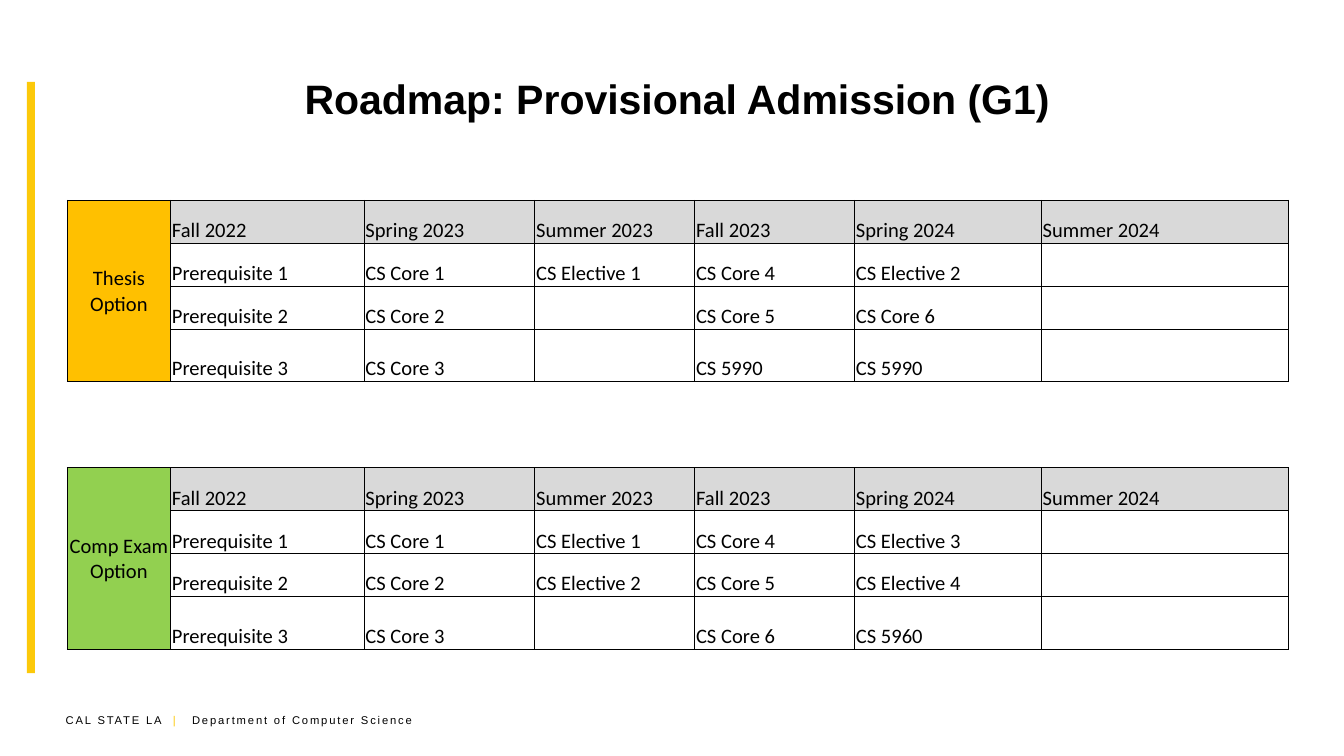
import pptx
import pptx.util
import pptx.dml.color
import pptx.enum.shapes
import pptx.enum.text
import pptx.oxml.ns
from lxml import etree

Inches, Pt = pptx.util.Inches, pptx.util.Pt
Align, Anchor = pptx.enum.text.PP_ALIGN, pptx.enum.text.MSO_ANCHOR
qn = pptx.oxml.ns.qn

# Content
HUES = {"ink": "000000", "gold": "FCC90A", "head": "D9D9D9",
        "thesis": "FFC000", "exam": "92D050"}
TITLE = "Roadmap: Provisional Admission (G1)"
FOOTER = [("CAL STATE LA ", "ink"), (" |\t", "gold"),
          ("Department of Computer Science", "ink")]
TERMS = ["Fall 2022", "Spring 2023", "Summer 2023",
         "Fall 2023", "Spring 2024", "Summer 2024"]
PLANS = [
    ("Thesis Option", "thesis", [
        ["Prerequisite 1", "CS Core 1", "CS Elective 1", "CS Core 4", "CS Elective 2", ""],
        ["Prerequisite 2", "CS Core 2", "", "CS Core 5", "CS Core 6", ""],
        ["Prerequisite 3", "CS Core 3", "", "CS 5990", "CS 5990", ""]]),
    ("Comp Exam Option", "exam", [
        ["Prerequisite 1", "CS Core 1", "CS Elective 1", "CS Core 4", "CS Elective 3", ""],
        ["Prerequisite 2", "CS Core 2", "CS Elective 2", "CS Core 5", "CS Elective 4", ""],
        ["Prerequisite 3", "CS Core 3", "", "CS Core 6", "CS 5960", ""]]),
]
COLS = [0.77, 1.44, 1.27, 1.19, 1.19, 1.39, 1.84]
ROWS = [0.32, 0.32, 0.32, 0.39]
LEFT, TOP, STEP = 0.5, 1.49, 1.99


def color(name):
    return pptx.dml.color.RGBColor.from_string(HUES[name])


def add_run(para, text, size, face, hue="ink", bold=False):
    run = para.add_run()
    run.text = text
    run.font.size, run.font.name, run.font.bold = Pt(size), face, bold
    run.font.color.rgb = color(hue)
    return run


def add_box(slide, *place):
    frame = slide.shapes.add_textbox(*map(Inches, place)).text_frame
    frame.word_wrap = True
    return frame


def add_edges(cell):
    props = cell._tc.get_or_add_tcPr()
    for spot, side in enumerate(("lnL", "lnR", "lnT", "lnB")):
        line = etree.Element(qn("a:" + side), w=str(Pt(0.5)))
        fill = etree.SubElement(line, qn("a:solidFill"))
        etree.SubElement(fill, qn("a:srgbClr"), val=HUES["ink"])
        props.insert(spot, line)


def fill_cell(cell, text, hue, label=False):
    cell.margin_left = cell.margin_right = cell.margin_top = Inches(0.01)
    cell.margin_bottom = 0
    cell.vertical_anchor = Anchor.MIDDLE if label else Anchor.BOTTOM
    if hue:
        cell.fill.solid()
        cell.fill.fore_color.rgb = color(hue)
    else:
        cell.fill.background()
    add_edges(cell)
    if text:
        para = cell.text_frame.paragraphs[0]
        para.alignment = Align.CENTER if label else Align.LEFT
        add_run(para, text, 11, "Calibri")


def add_plan(slide, top, label, hue, courses):
    table = slide.shapes.add_table(
        len(ROWS), len(COLS), Inches(LEFT), Inches(top),
        Inches(sum(COLS)), Inches(sum(ROWS))).table
    table.first_row = table.horz_banding = False
    for col, width in zip(table.columns, COLS):
        col.width = Inches(width)
    for row, height in zip(table.rows, ROWS):
        row.height = Inches(height)
    for r, texts in enumerate([TERMS] + courses):
        fill_cell(table.cell(r, 0), "" if r else label, hue, label=True)
        for c, text in enumerate(texts, 1):
            fill_cell(table.cell(r, c), text, None if r else "head")
    table.cell(0, 0).merge(table.cell(len(ROWS) - 1, 0))


# A 16:9 slide
deck = pptx.Presentation()
deck.slide_width = Inches(10)
deck.slide_height = deck.slide_width * 9 // 16
slide = deck.slides.add_slide(deck.slide_layouts[6])

# Footer, with a tab stop after the divider
para = add_box(slide, 0.39, 5.26, 2.92, 0.2).paragraphs[0]
stops = etree.SubElement(para._p.get_or_add_pPr(), qn("a:tabLst"))
etree.SubElement(stops, qn("a:tab"), pos=str(Inches(0.94)), algn="l")
for text, hue in FOOTER:
    run = add_run(para, text, 6, "Arial", hue)
    run.font._element.set("spc", "100")

# Side bar
bar = slide.shapes.add_shape(pptx.enum.shapes.MSO_SHAPE.RECTANGLE,
                             Inches(0.2), Inches(0.61), Inches(0.06), Inches(4.4))
bar.shadow.inherit = False
bar.fill.solid()
bar.fill.fore_color.rgb = color("gold")
bar.line.fill.background()

# Title
frame = add_box(slide, 0.59, 0.26, 8.9, 0.94)
frame.vertical_anchor = Anchor.MIDDLE
frame.paragraphs[0].alignment = Align.CENTER
add_run(frame.paragraphs[0], TITLE, 22, "Arial", bold=True)

# Plan tables
for n, plan in enumerate(PLANS):
    add_plan(slide, TOP + n * STEP, *plan)

deck.save("out.pptx")
